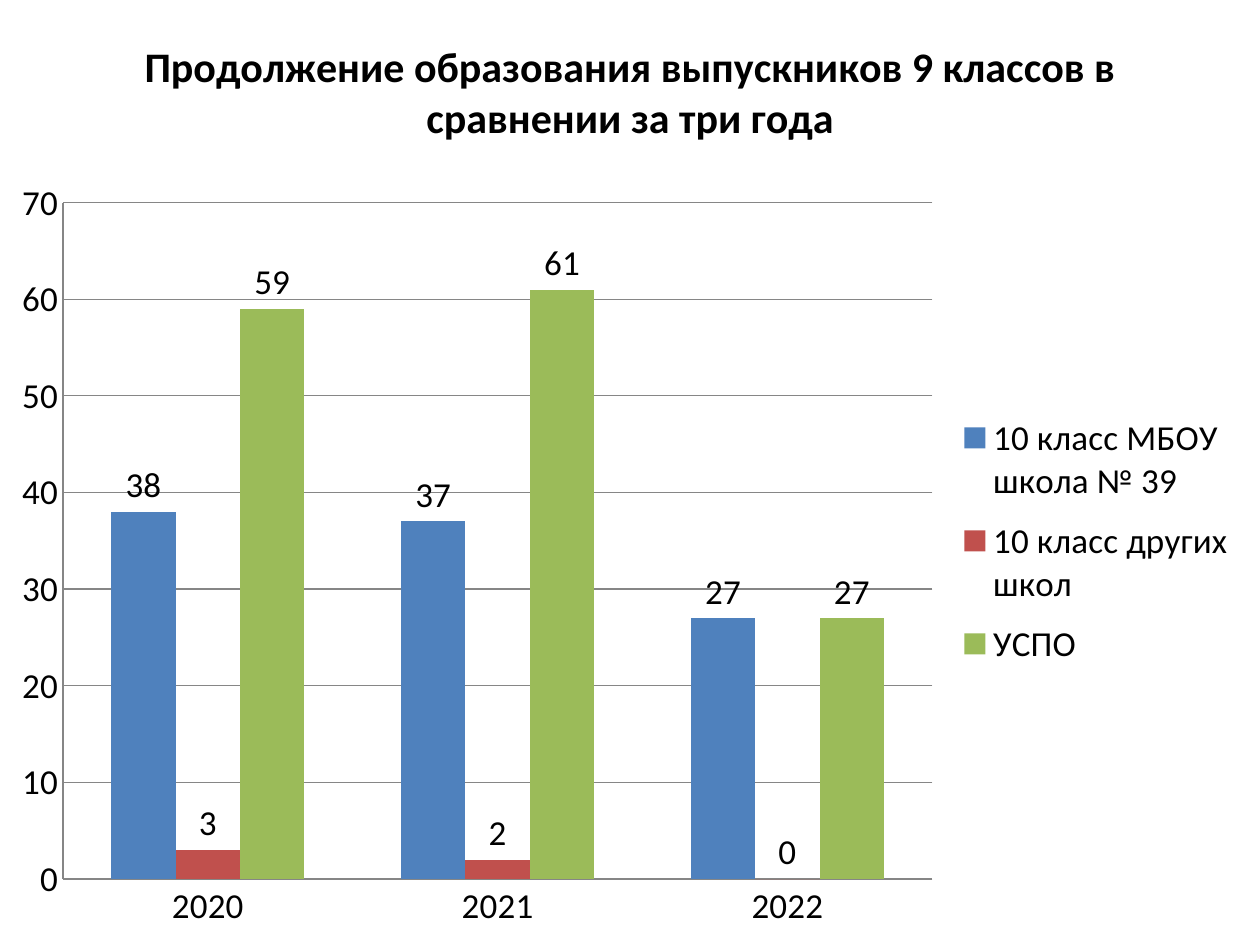
"""Builds a slide with a column chart of where school leavers went on to study."""
from lxml.etree import SubElement as Sub
from pptx import Presentation as Deck
from pptx.chart.data import CategoryChartData as Data
from pptx.dml.color import RGBColor as Color
from pptx.enum.chart import XL_CHART_TYPE as Kind
from pptx.enum.chart import XL_LABEL_POSITION as Spot
from pptx.enum.chart import XL_LEGEND_POSITION as Side
from pptx.enum.chart import XL_TICK_MARK as Tick
from pptx.oxml.ns import qn
from pptx.util import Pt

BLACK = Color(0x00, 0x00, 0x00)
GREY = Color(0x86, 0x86, 0x86)
BLUE = Color(0x4F, 0x81, 0xBD)
RED = Color(0xC0, 0x50, 0x4D)
GREEN = Color(0x9B, 0xBB, 0x59)
FACE = "Calibri"
TITLE = "Продолжение образования выпускников 9 классов в сравнении за три года"
YEARS = ("2020", "2021", "2022")
ROWS = (
    ("10 класс МБОУ школа № 39", (38, 37, 27), BLUE),
    ("10 класс других школ", (3, 2, 0), RED),
    ("УСПО", (59, 61, 27), GREEN),
)


def set_font(font, size, bold=False):
    font.name, font.size, font.bold = FACE, Pt(size), bold
    font.color.rgb = BLACK


def set_line(line):
    line.color.rgb = GREY
    line.width = Pt(0.75)


def place(node, spot, box, inner=False):
    for old in node.findall(qn("c:layout")):
        node.remove(old)
    frame = Sub(node, qn("c:layout"))
    node.insert(spot, frame)
    man = Sub(frame, qn("c:manualLayout"))
    marks = [("layoutTarget", "inner")] if inner else []
    marks += [("xMode", "edge"), ("yMode", "edge")]
    marks += zip("xywh", box)
    for tag, val in marks:
        Sub(man, qn("c:" + tag)).set("val", str(val))


def add_chart(slide):
    data = Data()
    data.categories = YEARS
    for name, vals, _ in ROWS:
        data.add_series(name, vals)
    chart = slide.shapes.add_chart(
        Kind.COLUMN_CLUSTERED, Pt(0), Pt(3), Pt(720), Pt(537), data
    ).chart
    set_font(chart.font, 20)
    return chart


def add_title(chart):
    chart.has_title = True
    run = chart.chart_title.text_frame.paragraphs[0].add_run()
    run.text = TITLE
    set_font(run.font, 24, True)


def style_bars(chart):
    plot = chart.plots[0]
    plot.gap_width, plot.overlap = 150, 0
    plot.vary_by_categories = False
    for bar, (_, _, color) in zip(plot.series, ROWS):
        bar.format.fill.solid()
        bar.format.fill.fore_color.rgb = color
        tags = bar.data_labels
        tags.show_value = True
        tags.position = Spot.OUTSIDE_END
        set_font(tags.font, 20)


def style_axes(chart):
    for axis in (chart.category_axis, chart.value_axis):
        axis.major_tick_mark = axis.minor_tick_mark = Tick.NONE
        set_line(axis.format.line)
        set_font(axis.tick_labels.font, 20)
    axis = chart.value_axis
    axis.minimum_scale, axis.maximum_scale, axis.major_unit = 0, 70, 10
    axis.has_major_gridlines = True
    set_line(axis.major_gridlines.format.line)


def add_legend(chart):
    chart.has_legend = True
    key = chart.legend
    key.position = Side.RIGHT
    key.include_in_layout = False
    set_font(key.font, 20)


def main():
    deck = Deck()
    deck.slide_width, deck.slide_height = Pt(720), Pt(540)
    slide = deck.slides.add_slide(deck.slide_layouts[6])
    chart = add_chart(slide)
    add_title(chart)
    style_bars(chart)
    style_axes(chart)
    add_legend(chart)
    area = next(chart.element.iter(qn("c:plotArea")))
    place(area, 0, (0.05, 0.21, 0.69, 0.72), True)
    key = next(chart.element.iter(qn("c:legend")))
    place(key, 1, (0.75, 0.42, 0.24, 0.3))
    deck.save("out.pptx")


if __name__ == "__main__":
    main()
